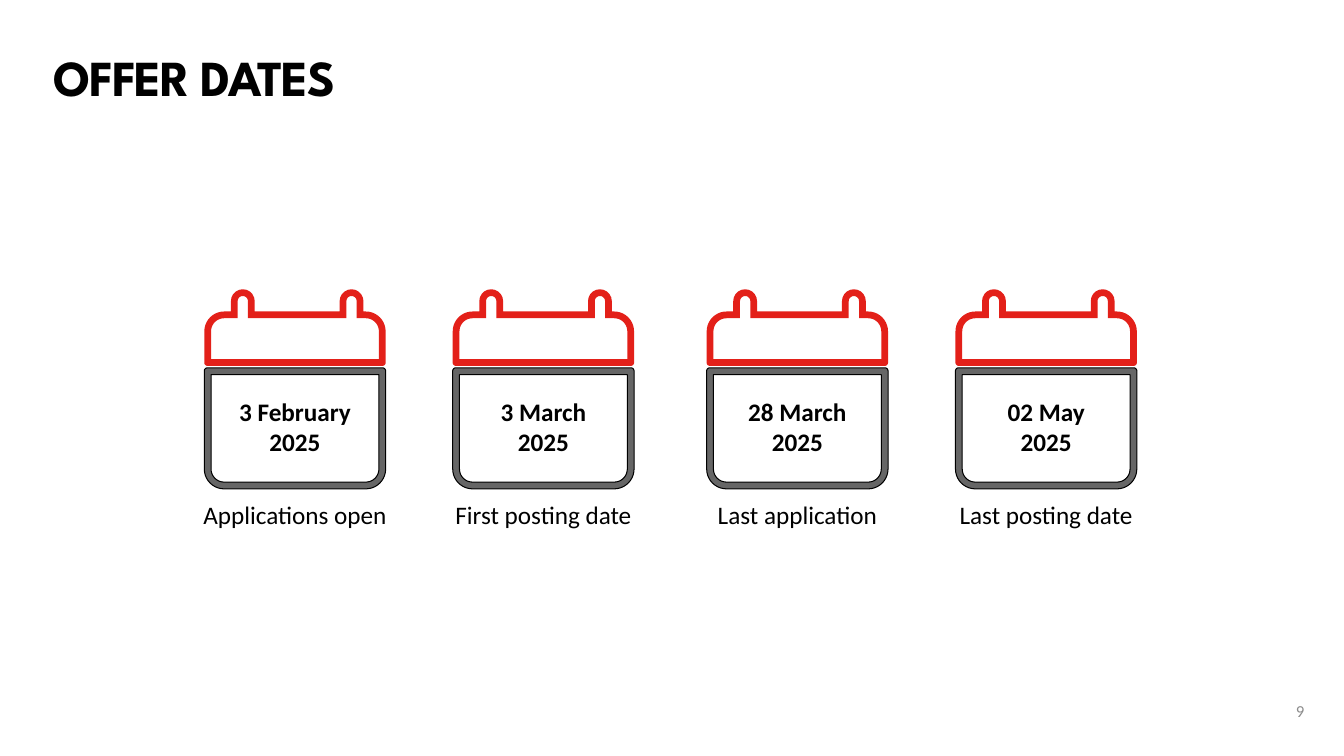
from math import cos, radians, sin

from pptx import Presentation
from pptx.dml.color import RGBColor as Rgb
from pptx.enum.text import MSO_ANCHOR as Anchor, PP_ALIGN as Align
from pptx.util import Cm, Pt

RED, GREY, BLACK, PALE = "E32019", "666666", "000000", "8C8C8C"

# Calendar sizes in cm
WIDE = 4.57
BAND = 0.17
CURVE = 0.5
NUB = 0.08
LID_TOP, LID_TALL, BAR = 7.29, 1.93, 0.56
BOX_TOP, BOX_TALL = 9.27, 3.05
RINGS, RING_R = (0.97, 3.71), 0.3

DATES = [
    (5.15, ["3 February", "2025"], "Applications open"),
    (11.41, ["3 March", "2025"], "First posting date"),
    (17.81, ["28 March", "2025"], "Last application"),
    (24.08, ["02 May", "2025"], "Last posting date"),
]


def color(code):
    return Rgb.from_string(code)


def text(slide, lines, left, top, wide, tall, size=18, font="Calibri",
         tint=BLACK, bold=False, align=Align.CENTER, anchor=Anchor.TOP,
         inset=0.25, lead=None, track=None):
    box = slide.shapes.add_textbox(Cm(left), Cm(top), Cm(wide), Cm(tall))
    frame = box.text_frame
    frame.word_wrap = True
    frame.vertical_anchor = anchor
    frame.margin_left = frame.margin_right = Cm(inset)
    frame.margin_top = frame.margin_bottom = Cm(inset / 2)
    for i, line in enumerate(lines):
        para = frame.paragraphs[0] if i == 0 else frame.add_paragraph()
        para.alignment = align
        if lead:
            para.line_spacing = Pt(lead)
        run = para.add_run()
        run.text = line
        run.font.name, run.font.size = font, Pt(size)
        run.font.bold = bold
        run.font.color.rgb = color(tint)
        if track:
            run.font._element.set("spc", str(track))


def arc(x, y, r, start, sweep=90):
    """Points clockwise on a circle, in steps of a tenth of the sweep."""
    turns = [radians(start + sweep * i / 10) for i in range(11)]
    return [(x + r * cos(t), y + r * sin(t)) for t in turns]


def lid(gap):
    """Top half with two rings, drawn in by the gap."""
    nub = max(NUB, gap)
    points = arc(nub, LID_TALL - nub, nub - gap, 90)
    points += arc(CURVE, BAR + CURVE, CURVE - gap, 180)
    for x in RINGS:
        r = RING_R - gap
        points.append((x - r, BAR + gap))
        points += arc(x, RING_R, r, 180, 180)
        points.append((x + r, BAR + gap))
    points += arc(WIDE - CURVE, BAR + CURVE, CURVE - gap, 270)
    return points + arc(WIDE - nub, LID_TALL - nub, nub - gap, 0)


def body(gap):
    """Lower half with round bottom corners, drawn in by the gap."""
    nub = max(NUB, gap)
    low = BOX_TALL - CURVE
    return (arc(nub, nub, nub - gap, 180)
            + arc(WIDE - nub, nub, nub - gap, 270)
            + arc(WIDE - CURVE, low, CURVE - gap, 0)
            + arc(CURVE, low, CURVE - gap, 90))


def band(slide, shape, left, top, fill, line=None):
    """Closed band between an outline and the same outline drawn in."""
    outer, inner = ([(Cm(left + x), Cm(top + y)) for x, y in shape(gap)]
                    for gap in (0, BAND))
    pen = slide.shapes.build_freeform(*outer[0])
    pen.add_line_segments(outer[1:])
    pen.move_to(*inner[0])
    pen.add_line_segments(inner[1:])
    form = pen.convert_to_shape()
    form.shadow.inherit = False
    form.fill.solid()
    form.fill.fore_color.rgb = color(fill)
    if line:
        form.line.color.rgb = color(line)
        form.line.width = Pt(0.75)
    else:
        form.line.fill.background()


def main():
    deck = Presentation()
    deck.slide_width, deck.slide_height = Cm(33.87), Cm(19.05)
    slide = deck.slides.add_slide(deck.slide_layouts[6])

    # Title and page number
    text(slide, ["OFFER DATES"], 1.35, 1.14, 27.97, 1.32, size=36,
         font="League Spartan", bold=True, align=Align.LEFT, inset=0,
         lead=44, track=-100)
    text(slide, ["9"], 32.08, 17.4, 1.04, 1.02, size=12, tint=PALE,
         align=Align.RIGHT, anchor=Anchor.MIDDLE)

    # Calendars with date and label
    for left, date, label in DATES:
        band(slide, lid, left, LID_TOP, RED)
        band(slide, body, left, BOX_TOP, GREY, BLACK)
        text(slide, date, left, 9.86, WIDE, 1.8, bold=True)
        text(slide, [label], left - 0.5, 12.47, WIDE + 1, 1.02)

    deck.save("out.pptx")


if __name__ == "__main__":
    main()
